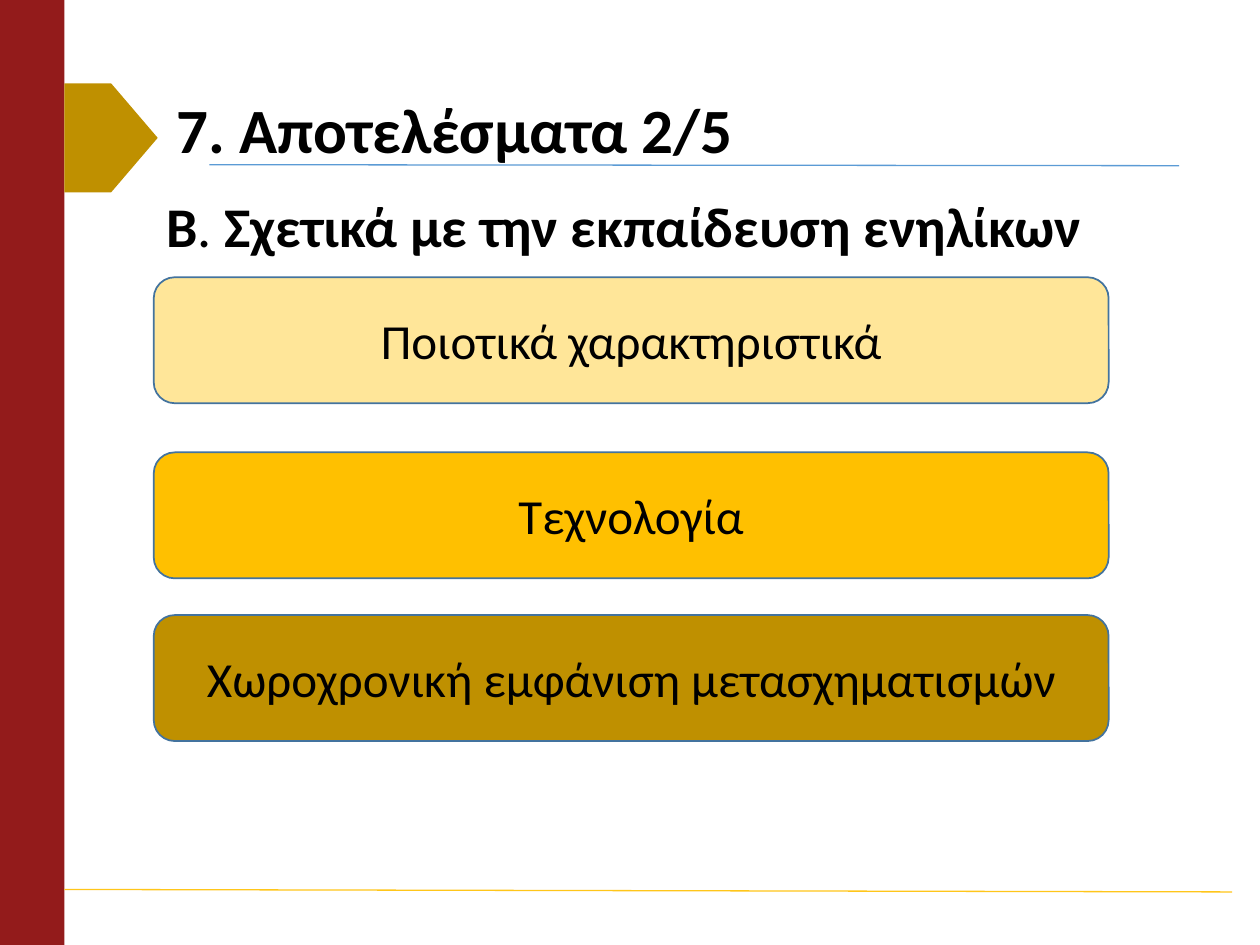
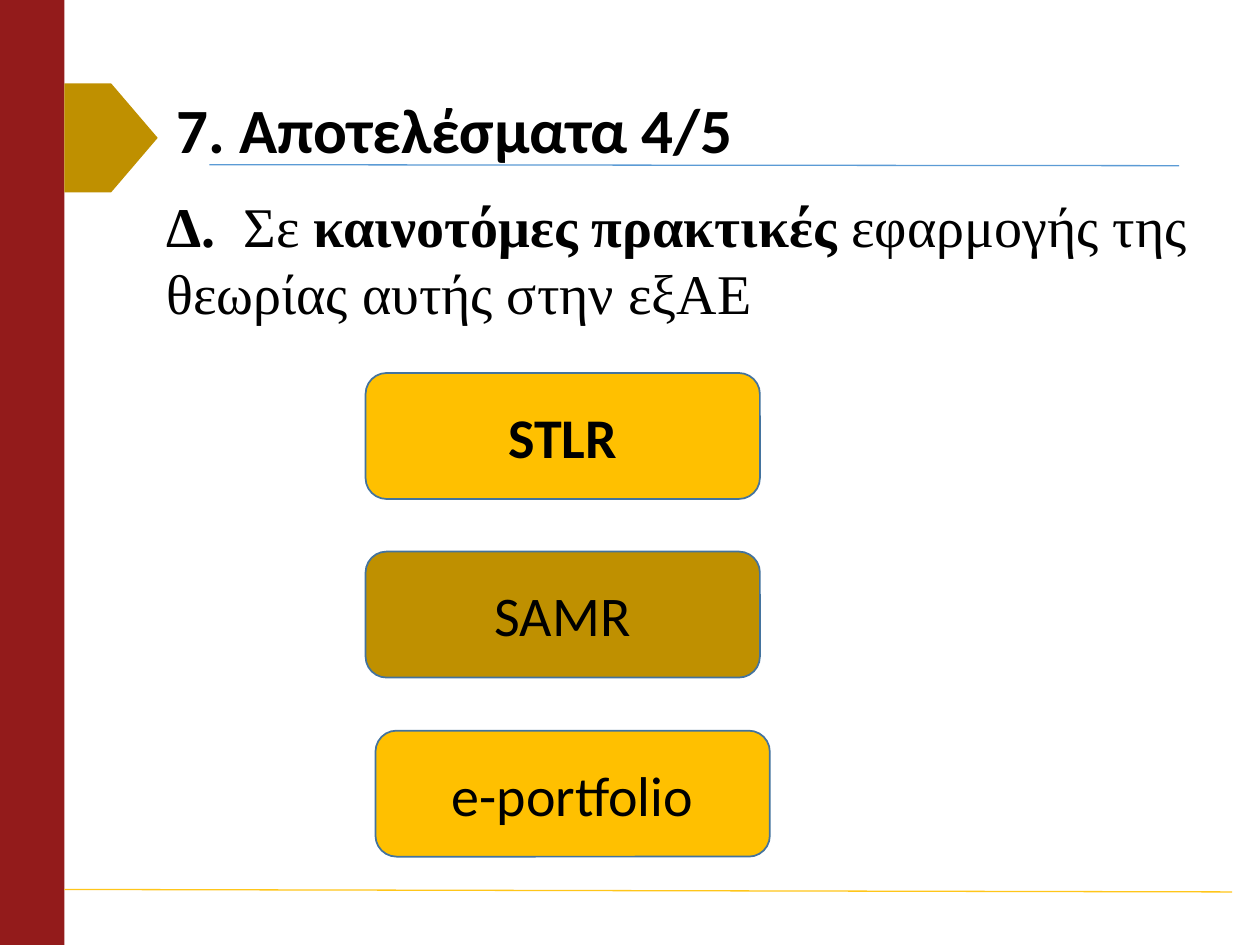
from lxml import etree
from pptx import Presentation
from pptx.dml.color import RGBColor
from pptx.enum.shapes import MSO_CONNECTOR, MSO_SHAPE
from pptx.enum.text import MSO_ANCHOR, MSO_AUTO_SIZE, PP_ALIGN
from pptx.oxml.ns import qn
from pptx.util import Cm, Pt

RECTANGLE = MSO_SHAPE.RECTANGLE
PENTAGON = MSO_SHAPE.PENTAGON
ROUNDED = MSO_SHAPE.ROUNDED_RECTANGLE
STRAIGHT = MSO_CONNECTOR.STRAIGHT

BLACK = RGBColor(0x00, 0x00, 0x00)
DARK_RED = RGBColor(0x93, 0x1B, 0x1B)
BLUE = RGBColor(0x5B, 0x9B, 0xD5)
OUTLINE_BLUE = RGBColor(0x43, 0x73, 0x9E)
FOOTER_GOLD = RGBColor(0xFF, 0xC6, 0x1A)
PALE_GOLD = RGBColor(0xFF, 0xE6, 0x99)
GOLD = RGBColor(0xFF, 0xC0, 0x00)
DARK_GOLD = RGBColor(0xBF, 0x90, 0x00)

SANS = "Calibri"
SERIF = "Times New Roman"

# Lengths are in centimetres. Heading runs are (text, bold);
# cards are (text, fill, left, top, bold).
SLIDES = [
    {
        "title": "7. Αποτελέσματα 2/5",
        "heading": [("Β", True), (".", False),
                    (" Σχετικά με την εκπαίδευση ενηλίκων", True)],
        "heading_font": SANS,
        "heading_size": (20.8, 1.8),
        "card_width": 19.25,
        "card_font_size": 28,
        "cards": [
            ("Ποιοτικά χαρακτηριστικά", PALE_GOLD, 3.1, 5.59, False),
            ("Τεχνολογία", GOLD, 3.1, 9.12, False),
            ("Χωροχρονική εμφάνιση μετασχηματισμών", DARK_GOLD, 3.1, 12.4, False),
        ],
    },
    {
        "title": "7. Αποτελέσματα 4/5",
        "heading": [("Δ.  ", True), ("Σε ", False), ("καινοτόμες πρακτικές ", True),
                    ("εφαρμογής της θεωρίας αυτής στην εξΑΕ", False)],
        "heading_font": SERIF,
        "heading_size": (21.41, 3.2),
        "card_width": 7.95,
        "card_font_size": 32,
        "cards": [
            ("STLR", GOLD, 7.37, 7.52, True),
            ("SAMR", DARK_GOLD, 7.37, 11.12, False),
            ("e-portfolio", GOLD, 7.57, 14.73, False),
        ],
    },
]

SLIDE_WIDTH, SLIDE_HEIGHT = 25.4, 19.05
BAND_WIDTH = 1.3
CARD_HEIGHT = 2.54
TITLE_BOX = (3.3, 1.61, 21.79, 2.13)
HEADING_LEFT, HEADING_TOP = 3.1, 3.73
RULES = [((4.22, 3.32), (23.77, 3.34), BLUE),
         ((BAND_WIDTH, 17.93), (24.84, 17.98), FOOTER_GOLD)]


def place(shape, left, top, width, height):
    shape.left, shape.top = Cm(left), Cm(top)
    shape.width, shape.height = Cm(width), Cm(height)


def style_runs(paragraph, font_name, size):
    for run in paragraph.runs:
        run.font.name = font_name
        run.font.size = Pt(size)
        run.font.color.rgb = BLACK


def add_filled_shape(slide, kind, box, fill):
    shape = slide.shapes.add_shape(kind, *map(Cm, box))
    shape.shadow.inherit = False
    shape.fill.solid()
    shape.fill.fore_color.rgb = fill
    shape.line.fill.background()
    return shape


def add_rule(slide, start, end, color):
    rule = slide.shapes.add_connector(STRAIGHT, *map(Cm, start + end))
    rule.line.color.rgb = color
    rule.line.width = Pt(0.75)
    etree.SubElement(rule._element.spPr, qn("a:effectLst"))


def add_frame(slide):
    """Draw the band, rules and title marker that every slide shares."""
    add_filled_shape(slide, RECTANGLE, (0, 0, BAND_WIDTH, SLIDE_HEIGHT), DARK_RED)
    for rule in RULES:
        add_rule(slide, *rule)
    add_filled_shape(slide, PENTAGON, (BAND_WIDTH, 1.68, 1.88, 2.2), DARK_GOLD)


def fill_title(title, text):
    place(title, *TITLE_BOX)
    text_frame = title.text_frame
    text_frame.text = text
    text_frame.auto_size = MSO_AUTO_SIZE.NONE
    text_frame.vertical_anchor = MSO_ANCHOR.MIDDLE
    paragraph = text_frame.paragraphs[0]
    paragraph.alignment = PP_ALIGN.LEFT
    paragraph.line_spacing = 0.9
    style_runs(paragraph, SANS, 36)
    paragraph.runs[0].font.bold = True


def fill_heading(body, parts, font_name, size):
    place(body, HEADING_LEFT, HEADING_TOP, *size)
    body.text_frame.auto_size = MSO_AUTO_SIZE.NONE
    paragraph = body.text_frame.paragraphs[0]
    paragraph.space_before = Pt(0)
    properties = paragraph._p.get_or_add_pPr()
    properties.set("marL", "0")
    properties.set("indent", "0")
    etree.SubElement(properties, qn("a:buNone"))
    for text, bold in parts:
        run = paragraph.add_run()
        run.text = text
        run.font.bold = bold
    style_runs(paragraph, font_name, 32)


def add_card(slide, text, fill, left, top, bold, width, font_size):
    card = add_filled_shape(slide, ROUNDED, (left, top, width, CARD_HEIGHT), fill)
    card.line.color.rgb = OUTLINE_BLUE
    card.line.width = Pt(1)
    card.text_frame.text = text
    card.text_frame.word_wrap = True
    card.text_frame.vertical_anchor = MSO_ANCHOR.MIDDLE
    paragraph = card.text_frame.paragraphs[0]
    paragraph.alignment = PP_ALIGN.CENTER
    style_runs(paragraph, SANS, font_size)
    paragraph.runs[0].font.bold = bold


def main():
    presentation = Presentation()
    presentation.slide_width = Cm(SLIDE_WIDTH)
    presentation.slide_height = Cm(SLIDE_HEIGHT)
    title_and_content = presentation.slide_layouts[1]
    for content in SLIDES:
        slide = presentation.slides.add_slide(title_and_content)
        add_frame(slide)
        fill_title(slide.shapes.title, content["title"])
        fill_heading(slide.placeholders[1], content["heading"],
                     content["heading_font"], content["heading_size"])
        for card in content["cards"]:
            add_card(slide, *card, content["card_width"], content["card_font_size"])
    presentation.save("out.pptx")


if __name__ == "__main__":
    main()
